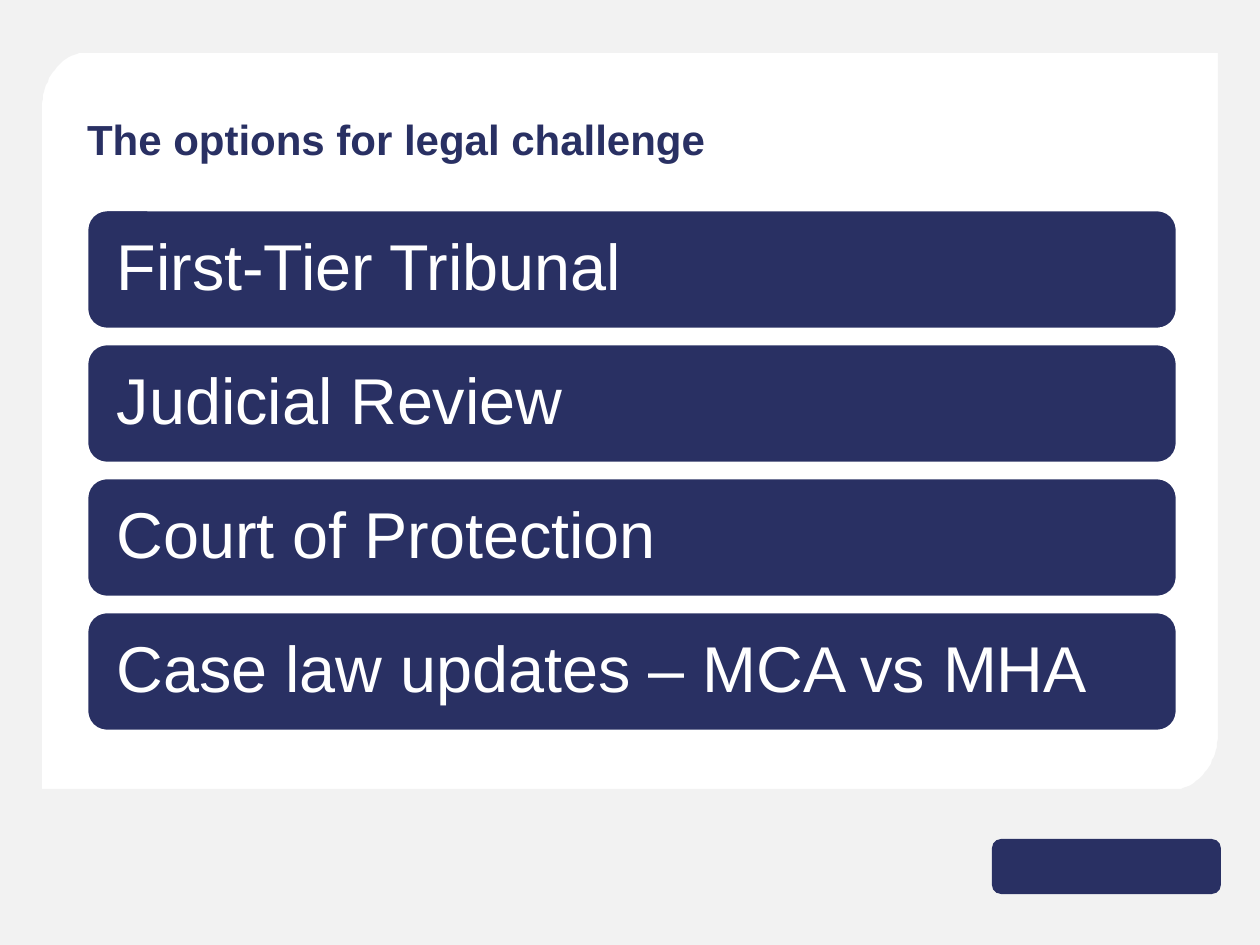
from math import cos, pi, sin

from pptx import Presentation
from pptx.dml.color import RGBColor
from pptx.enum.shapes import MSO_SHAPE
from pptx.enum.text import MSO_ANCHOR, PP_ALIGN
from pptx.util import Pt

ROUND = MSO_SHAPE.ROUNDED_RECTANGLE
LEFT = PP_ALIGN.LEFT
MIDDLE, BOTTOM = MSO_ANCHOR.MIDDLE, MSO_ANCHOR.BOTTOM

SCALE = 914400 / 126  # EMU per px
WIDE, HIGH = 1260, 945
NAVY, GREY, WHITE = "293063", "F2F2F2", "FFFFFF"
FONT = "Arial"


def px(num):
    return round(num * SCALE)


def color(code):
    return RGBColor.from_string(code)


def arc(mid_x, mid_y, rad_x, rad_y, start, steps=24):
    """Points of a quarter ellipse, clockwise from the start angle."""
    turns = [start + pi / 2 * i / steps for i in range(steps + 1)]
    return [(mid_x + rad_x * cos(t), mid_y + rad_y * sin(t)) for t in turns]


class Deck:
    def __init__(self, slide):
        self.slide = slide
        self.shapes = slide.shapes

    def paint(self, shape, fill, line=None):
        shape.shadow.inherit = False
        shape.fill.solid()
        shape.fill.fore_color.rgb = color(fill)
        if line:
            shape.line.color.rgb = color(line)
            shape.line.width = Pt(1.5)
        else:
            shape.line.fill.background()

    def label(self, shape, text, size, ink, anchor, pad=0, bold=False):
        frame = shape.text_frame
        frame.word_wrap = True
        frame.vertical_anchor = anchor
        frame.margin_left = frame.margin_right = px(pad)
        frame.margin_top = frame.margin_bottom = px(pad)
        para = frame.paragraphs[0]
        para.alignment = LEFT
        para.line_spacing = 0.9
        run = para.add_run()
        run.text = text
        run.font.name = FONT
        run.font.size = Pt(size)
        run.font.bold = bold
        run.font.color.rgb = color(ink)

    def title(self, text, x, y, w, h):
        box = self.shapes.add_textbox(px(x), px(y), px(w), px(h))
        self.label(box, text, 24, NAVY, BOTTOM, bold=True)

    def block(self, x, y, w, h, fill, line=None):
        shape = self.shapes.add_shape(ROUND, px(x), px(y), px(w), px(h))
        self.paint(shape, fill, line)
        return shape

    def bar(self, text, x, y, w, h):
        shape = self.block(x, y, w, h, NAVY, WHITE)
        self.label(shape, text, 37, WHITE, MIDDLE, pad=24)

    def frame(self, left, top, right, low, rad_x, rad_y):
        """Grey border around a panel with two rounded corners."""
        edge = [(left, low)]
        edge += arc(left + rad_x, top + rad_y, rad_x, rad_y, pi)
        edge += [(right, top)]
        edge += arc(right - rad_x, low - rad_y, rad_x, rad_y, 0)
        form = self.shapes.build_freeform(0, 0, scale=SCALE)
        form.add_line_segments([(0, HIGH), (WIDE, HIGH), (WIDE, 0)])
        form.move_to(*edge[0])
        form.add_line_segments(edge[1:])
        self.paint(form.convert_to_shape(), GREY)


def main():
    prs = Presentation()
    prs.slide_width, prs.slide_height = px(WIDE), px(HIGH)
    deck = Deck(prs.slides.add_slide(prs.slide_layouts[6]))

    # Border and brand mark
    deck.frame(42, 53, 1218, 789, 43, 57)
    deck.block(992, 839, 229, 55, NAVY)

    # Title
    left, wide = 87, 1090
    deck.title("The options for legal challenge", left, 102, wide, 63)

    # Option bars
    top, step, high = 210, 134, 119
    options = [
        "First-Tier Tribunal",
        "Judicial Review",
        "Court of Protection",
        "Case law updates – MCA vs MHA",
    ]
    for i, text in enumerate(options):
        deck.bar(text, left, top + i * step, wide, high)

    prs.save("out.pptx")


if __name__ == "__main__":
    main()
